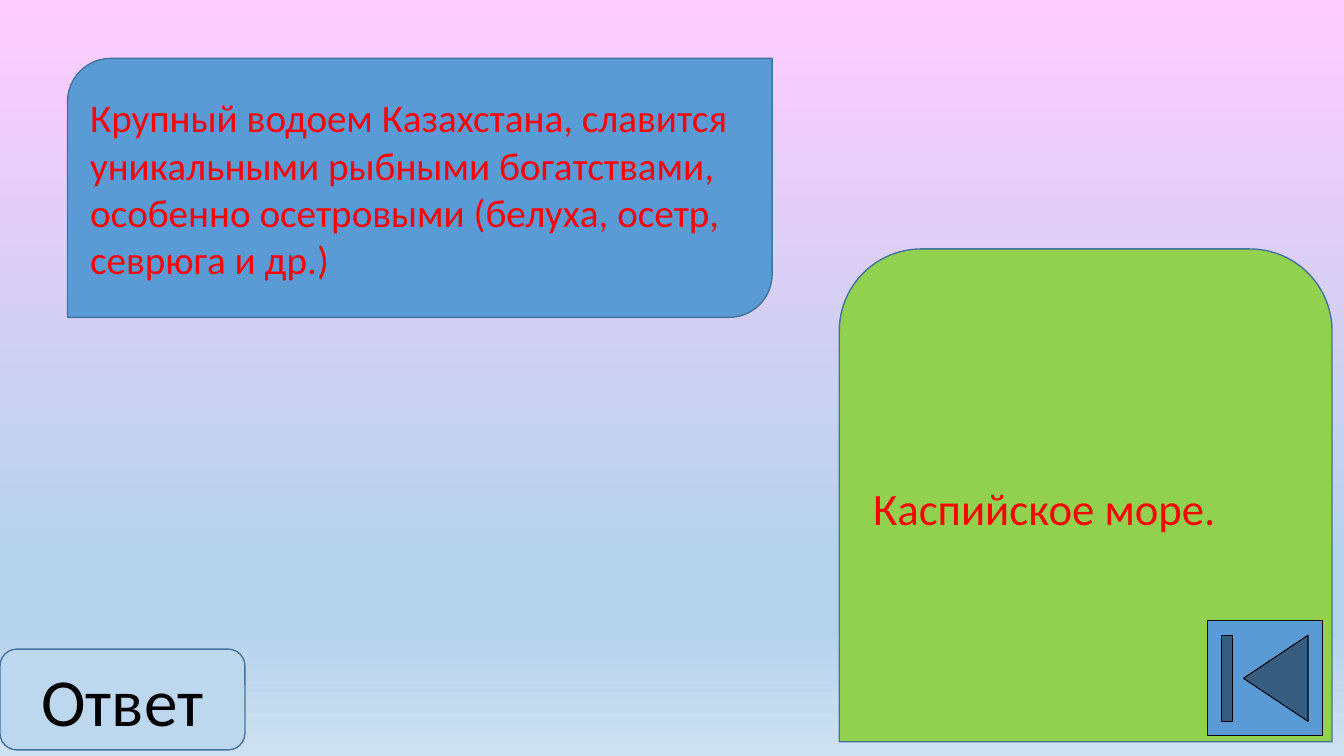
from dataclasses import dataclass

from lxml.etree import SubElement
from pptx import Presentation
from pptx.dml.color import RGBColor
from pptx.enum.shapes import MSO_SHAPE as Shape
from pptx.enum.text import MSO_ANCHOR as Anchor, PP_ALIGN as Align
from pptx.oxml.ns import qn
from pptx.util import Pt


@dataclass(frozen=True)
class Theme:
    font: str = "Calibri"
    question_size: int = 28
    answer_size: int = 32
    button_size: int = 48
    blue: str = "5B9BD5"
    green: str = "92D050"
    pale_blue: str = "BDD7EE"
    outline: str = "43739E"
    red: str = "FF0000"
    black: str = "000000"
    sky: tuple = ((0, "FFCCFF"), (74, "B5D2EC"), (83, "B5D2EC"), (100, "CEE1F2"))


THEME = Theme()


def paint_background(page, stops):
    fill = page.background.fill
    fill.gradient()
    fill.gradient_angle = 270
    stop_list = next(page.element.iter(qn("a:gsLst")))
    for old_stop in list(stop_list):
        stop_list.remove(old_stop)
    for percent, color in stops:
        stop = SubElement(stop_list, qn("a:gs"), pos=str(percent * 1000))
        SubElement(stop, qn("a:srgbClr"), val=color)


def add_box(page, kind, left, top, width, height, fill, line=THEME.outline, weight=1):
    box = page.shapes.add_shape(kind, Pt(left), Pt(top), Pt(width), Pt(height))
    box.shadow.inherit = False
    box.fill.solid()
    box.fill.fore_color.rgb = RGBColor.from_string(fill)
    box.line.color.rgb = RGBColor.from_string(line)
    box.line.width = Pt(weight)
    return box


def write_text(box, text, *, size, color, align=Align.LEFT):
    frame = box.text_frame
    frame.word_wrap = True
    frame.vertical_anchor = Anchor.MIDDLE
    para = frame.paragraphs[0]
    para.alignment = align
    span = para.add_run()
    span.text = text
    span.font.name = THEME.font
    span.font.size = Pt(size)
    span.font.color.rgb = RGBColor.from_string(color)


def main():
    deck = Presentation()
    deck.slide_width, deck.slide_height = Pt(960), Pt(540)
    page = deck.slides.add_slide(deck.slide_layouts[6])
    paint_background(page, THEME.sky)

    question = add_box(page, Shape.ROUND_2_DIAG_RECTANGLE, 48.24, 41.76, 503.28, 185, THEME.blue)
    write_text(
        question,
        "Крупный водоем Казахстана, славится уникальными рыбными богатствами, "
        "особенно осетровыми (белуха, осетр, севрюга и др.)",
        size=THEME.question_size,
        color=THEME.red,
    )

    answer = add_box(page, Shape.ROUND_2_SAME_RECTANGLE, 599.5, 177.84, 352, 352, THEME.green)
    write_text(answer, "Каспийское море.", size=THEME.answer_size, color=THEME.red)

    answer_button = add_box(page, Shape.ROUNDED_RECTANGLE, 0, 463.68, 175, 72, THEME.pale_blue)
    write_text(answer_button, "Ответ", size=THEME.button_size, color=THEME.black, align=Align.CENTER)

    add_box(page, Shape.ACTION_BUTTON_BEGINNING, 862.56, 443.5, 82, 82,
            THEME.blue, line=THEME.black, weight=0.75)

    deck.save("out.pptx")


if __name__ == "__main__":
    main()
